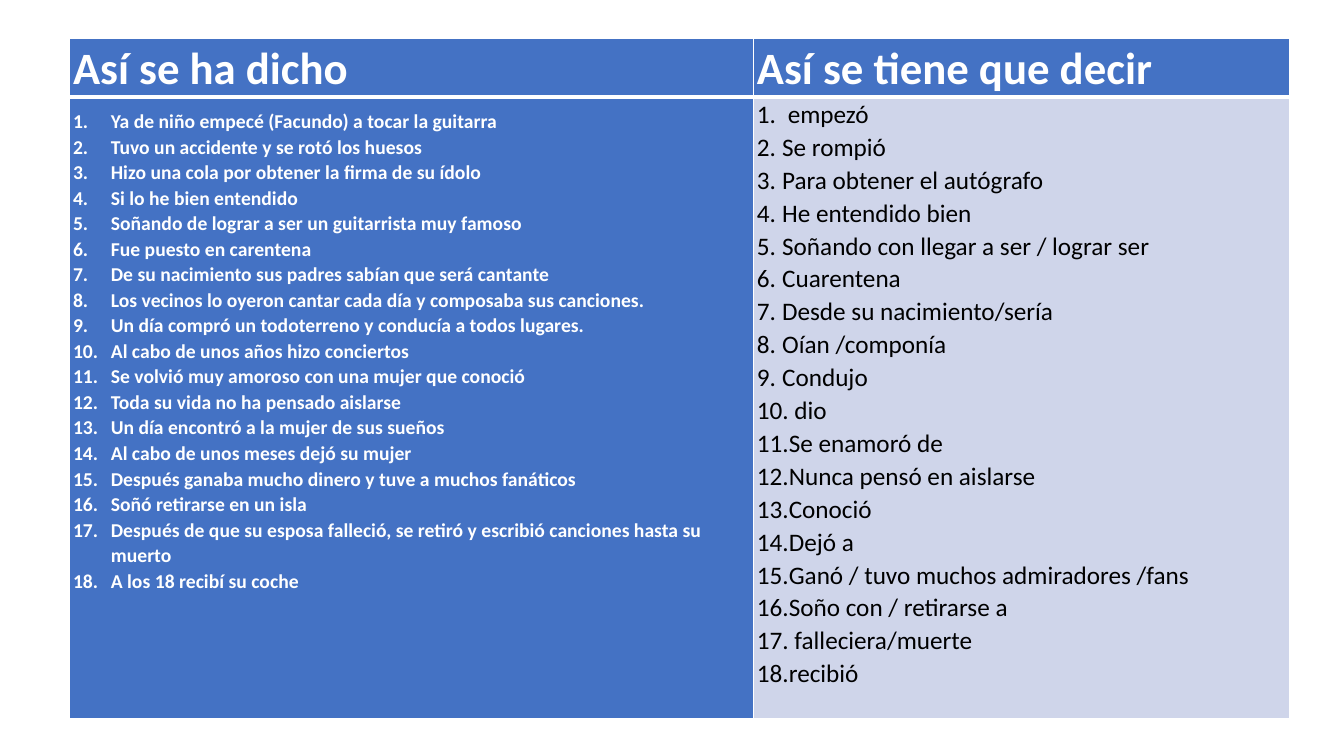
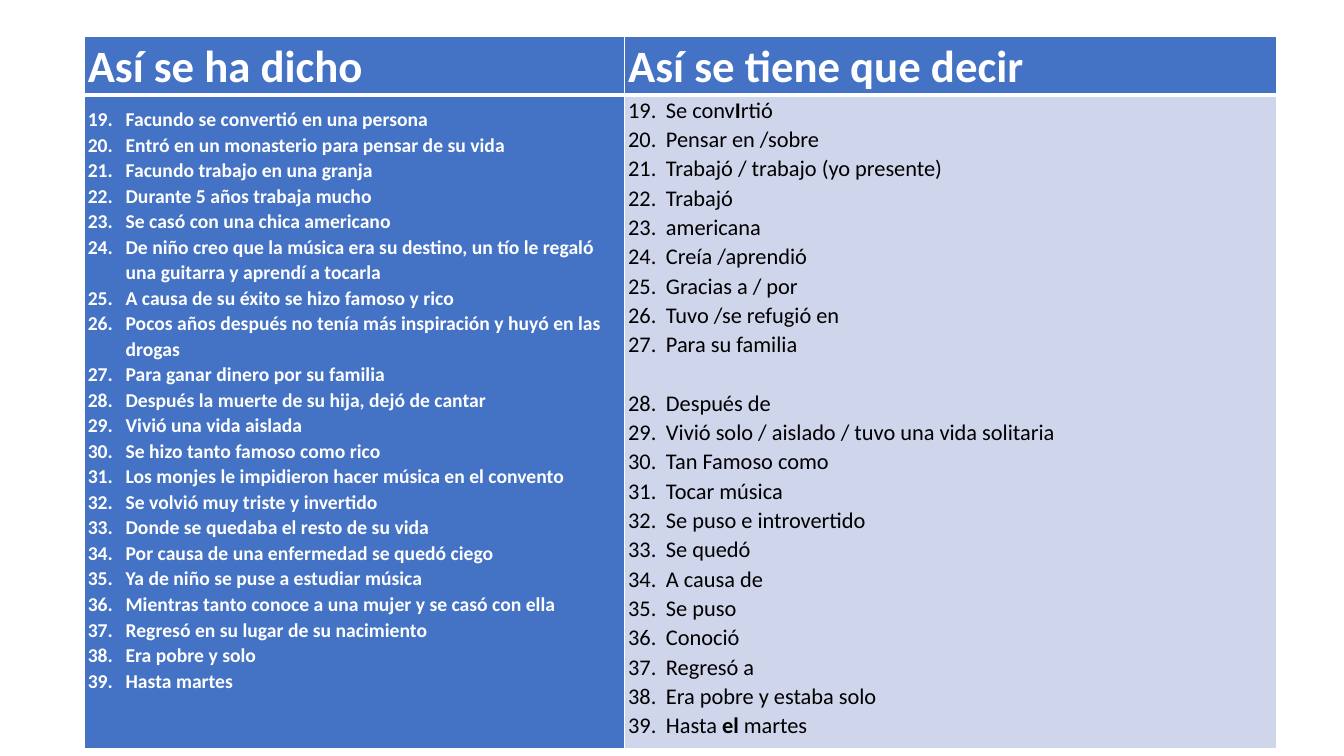
from pptx import Presentation
from pptx.dml.color import RGBColor
from pptx.oxml.ns import qn
from pptx.util import Pt
from lxml.etree import SubElement

COLORS = {"blue": "4472C4", "pale": "CFD5EA", "white": "FFFFFF", "black": "000000"}
HEADINGS = ("Así se ha dicho", "Así se tiene que decir")

SAID_FIRST = [
    "Ya de niño empecé (Facundo) a tocar la guitarra",
    "Tuvo un accidente y se rotó los huesos",
    "Hizo una cola por obtener la firma de su ídolo",
    "Si lo he bien entendido",
    "Soñando de lograr a ser un guitarrista muy famoso",
    "Fue puesto en carentena",
    "De su nacimiento sus padres sabían que será cantante",
    "Los vecinos lo oyeron cantar cada día y composaba sus canciones.",
    "Un día compró un todoterreno y conducía a todos lugares.",
    "Al cabo de unos años hizo conciertos",
    "Se volvió muy amoroso con una mujer que conoció",
    "Toda su vida no ha pensado aislarse",
    "Un día encontró a la mujer de sus sueños",
    "Al cabo de unos meses dejó su mujer",
    "Después ganaba mucho dinero y tuve a muchos fanáticos",
    "Soñó retirarse en un isla",
    "Después de que su esposa falleció, se retiró y escribió canciones hasta su muerto",
    "A los 18 recibí su coche",
]
CORRECT_FIRST = [
    " empezó",
    "Se rompió",
    "Para obtener el autógrafo",
    "He entendido bien",
    "Soñando con llegar a ser / lograr ser",
    "Cuarentena",
    "Desde su nacimiento/sería",
    "Oían /componía",
    "Condujo",
    " dio",
    "Se enamoró de",
    "Nunca pensó en aislarse",
    "Conoció",
    "Dejó a",
    "Ganó / tuvo muchos admiradores /fans",
    "Soño con / retirarse a",
    " falleciera/muerte",
    "recibió",
]
SAID_SECOND = [
    "Facundo se convertió en una persona",
    "Entró en un monasterio para pensar de su vida",
    "Facundo trabajo en una granja",
    "Durante 5 años trabaja mucho",
    "Se casó con una chica americano",
    "De niño creo que la música era su destino, un tío le regaló una guitarra y aprendí a tocarla",
    "A causa de su éxito se hizo famoso y rico",
    "Pocos años después no tenía más inspiración y huyó en las drogas",
    "Para ganar dinero por su familia",
    "Después la muerte de su hija, dejó de cantar",
    "Vivió una vida aislada",
    "Se hizo tanto famoso como rico",
    "Los monjes le impidieron hacer música en el convento",
    "Se volvió muy triste y invertido",
    "Donde se quedaba el resto de su vida",
    "Por causa de una enfermedad se quedó ciego",
    "Ya de niño se puse a estudiar música",
    "Mientras tanto conoce a una mujer y se casó con ella",
    "Regresó en su lugar de su nacimiento",
    "Era pobre y solo",
    "Hasta martes",
]
CORRECT_SECOND = [
    "Se conv*I*rtió",
    "Pensar en /sobre",
    "Trabajó / trabajo (yo presente)",
    "Trabajó",
    "americana",
    "Creía /aprendió",
    "Gracias a / por",
    "Tuvo /se refugió en",
    "Para su familia",
    "Después de",
    "Vivió solo / aislado / tuvo una vida solitaria",
    "Tan Famoso como",
    "Tocar música",
    "Se puso e introvertido",
    "Se quedó",
    "A causa de",
    "Se puso",
    "Conoció",
    "Regresó a",
    "Era pobre y estaba solo",
    "Hasta *el* martes",
]


class CorrectionDeck:
    font = "Calibri"
    line_spacing = 1.07
    header_height = 42

    def __init__(self):
        self.prs = Presentation()
        self.prs.slide_width, self.prs.slide_height = Pt(960), Pt(540)
        self.slide = None

    def add_slide(self):
        self.slide = self.prs.slides.add_slide(self.prs.slide_layouts[6])

    def table(self, left, top, widths, body_height):
        """Add the two-column table with its headings and return it."""
        height = self.header_height + body_height
        table = self.slide.shapes.add_table(
            2, 2, Pt(left), Pt(top), Pt(sum(widths)), Pt(height)).table
        for column, width in zip(table.columns, widths):
            column.width = Pt(width)
        for row, row_height in zip(table.rows, (self.header_height, body_height)):
            row.height = Pt(row_height)
        for column, heading in enumerate(HEADINGS):
            cell = table.cell(0, column)
            self.style_cell(cell, "blue", bottom=3)
            self.add_text(cell.text_frame.paragraphs[0], heading, 32, "white", True)
            self.style_cell(table.cell(1, column), ("blue", "pale")[column], top=3)
        return table

    def style_cell(self, cell, fill, top=1, bottom=1):
        cell.margin_left = cell.margin_right = Pt(2.7)
        cell.margin_top = cell.margin_bottom = Pt(0)
        borders = {"a:lnL": 1, "a:lnR": 1, "a:lnT": top, "a:lnB": bottom}
        for side, width in borders.items():
            line = SubElement(cell._tc.get_or_add_tcPr(), qn(side), w=str(Pt(width)))
            solid = SubElement(line, qn("a:solidFill"))
            SubElement(solid, qn("a:srgbClr"), val=COLORS["white"])
        cell.fill.solid()
        cell.fill.fore_color.rgb = RGBColor.from_string(COLORS[fill])

    def add_text(self, paragraph, text, size, color, bold=False):
        """Add text in which *asterisks* enclose bold words."""
        paragraph.line_spacing = self.line_spacing
        for index, part in enumerate(text.split("*")):
            run = paragraph.add_run()
            run.text = part
            run.font.name = self.font
            run.font.size = Pt(size)
            run.font.bold = bold or index % 2 == 1
            run.font.color.rgb = RGBColor.from_string(COLORS[color])

    def numbered_list(self, cell, items, start, size, color, bold=False, indent=27):
        frame = cell.text_frame
        for index, item in enumerate(items):
            paragraph = frame.add_paragraph() if index else frame.paragraphs[0]
            properties = paragraph._p.get_or_add_pPr()
            properties.set("marL", str(Pt(indent)))
            properties.set("indent", str(-Pt(indent)))
            SubElement(properties, qn("a:buFont"), typeface="+mj-lt")
            SubElement(properties, qn("a:buAutoNum"), type="arabicPeriod", startAt=str(start))
            self.add_text(paragraph, item, size, color, bold)

    def correction_slide(self, left, top, widths, body_height, said, correct,
                         start, correct_size, correct_indent):
        """Add one slide and return the cell of corrected phrases."""
        self.add_slide()
        table = self.table(left, top, widths, body_height)
        said_cell, correct_cell = table.cell(1, 0), table.cell(1, 1)
        said_cell.margin_top = Pt(8)
        self.numbered_list(said_cell, said, start, 14, "white", bold=True)
        self.numbered_list(correct_cell, correct, start, correct_size, "black",
                           indent=correct_indent)
        return correct_cell


def main():
    deck = CorrectionDeck()
    deck.correction_slide(49.5, 27.5, (488.5, 383), 443.5, SAID_FIRST, CORRECT_FIRST,
                          start=1, correct_size=18, correct_indent=18)
    correct_cell = deck.correction_slide(
        60, 26, (386, 466), 467, SAID_SECOND, CORRECT_SECOND,
        start=19, correct_size=16, correct_indent=27)
    after_gap = correct_cell.text_frame.paragraphs[CORRECT_SECOND.index("Después de")]
    after_gap.space_before = Pt(21)
    deck.prs.save("out.pptx")


if __name__ == "__main__":
    main()
